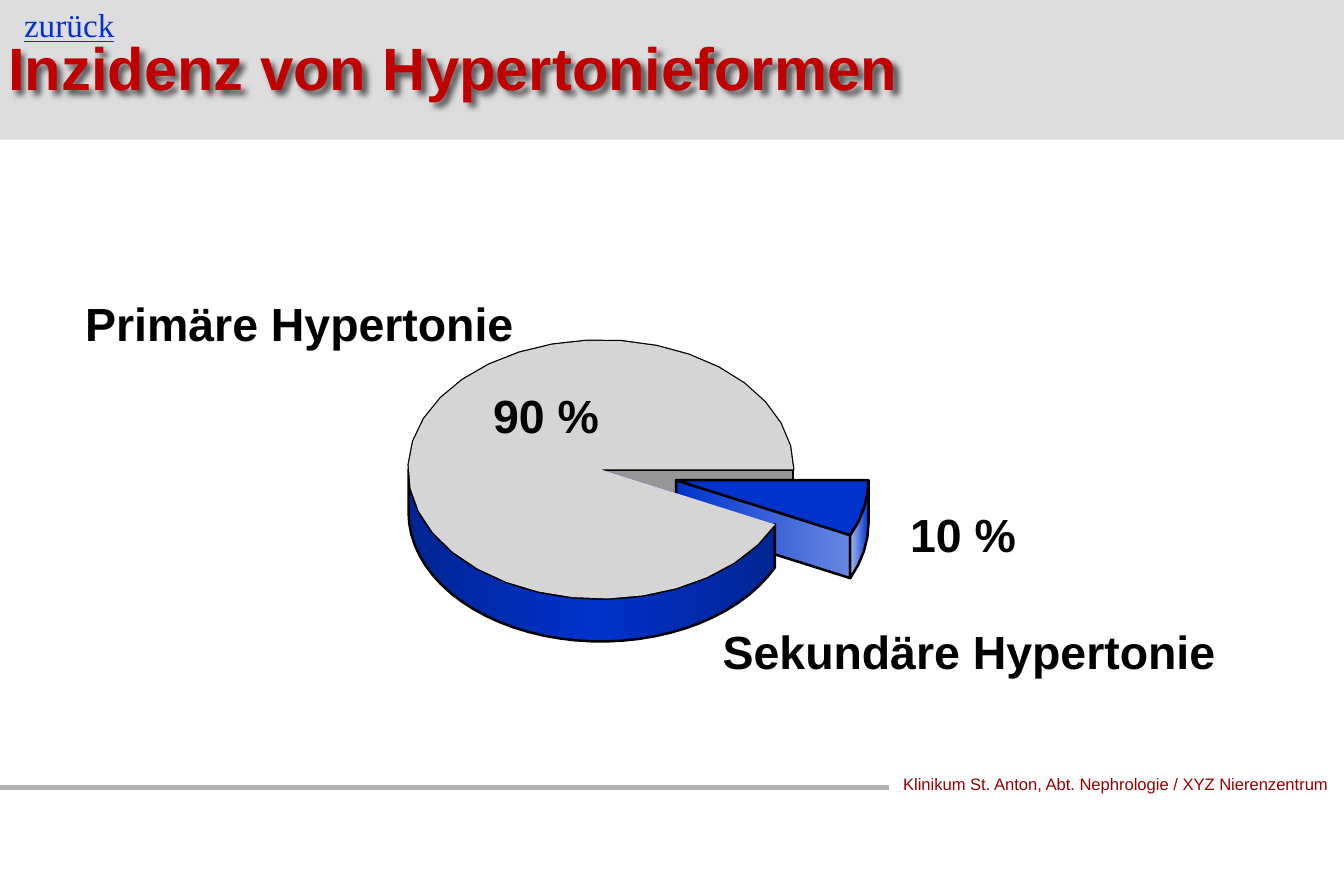
"""Build a slide with an exploded pie drawing of the incidence of hypertension forms."""
from dataclasses import dataclass
from math import cos, radians, sin

from lxml import etree
from pptx import Presentation, util as u
from pptx.dml.color import RGBColor
from pptx.enum import shapes, text
from pptx.oxml import ns

RX, RY, DEPTH = 1.61, 1.08, 0.36
CUT = 25.2
DISC = (5.03, 3.93)
WEDGE = (5.66, 4.02)
BLACK, BLUE, DARK, GREY = "000000", "0033CC", "002492", "D5D5D5"

Point = tuple[float, float]


@dataclass
class Face:
    pts: list[Point]
    fill: tuple[str, ...] = ()
    line: bool = True
    close: bool = True


@dataclass
class Label:
    words: str
    box: tuple[float, float, float, float]
    size: int = 28
    hue: str = BLACK
    font: str = "Arial"
    bold: bool = True
    under: bool = False
    wrap: bool = False
    align: text.PP_ALIGN = text.PP_ALIGN.CENTER


def paint(fmt, hue: str) -> None:
    """Set a solid colour on a fill."""
    fmt.solid()
    fmt.fore_color.rgb = RGBColor.from_string(hue)


def arc(mid: Point, start: float, end: float, steps: int = 32) -> list[Point]:
    """Return points on the ellipse around mid, clockwise from start to end."""
    turns = [radians(start + (end - start) * i / steps) for i in range(steps + 1)]
    return [(mid[0] + RX * cos(t), mid[1] + RY * sin(t)) for t in turns]


def wall(edge: list[Point]) -> list[Point]:
    """Return the upright band that hangs below an edge."""
    return edge + [(x, y + DEPTH) for x, y in reversed(edge)] + edge[:1]


def blend(shape, hues: tuple[str, ...]) -> None:
    """Fill a shape with a left to right gradient of evenly spaced colours."""
    shape.fill.gradient()
    shape.fill.gradient_angle = 0
    stops = shape._element.xpath(".//a:gsLst")[0]
    for stop in list(stops):
        stops.remove(stop)
    for i, hue in enumerate(hues):
        stop = etree.SubElement(stops, ns.qn("a:gs"), pos=str(100000 * i // (len(hues) - 1)))
        etree.SubElement(stop, ns.qn("a:srgbClr"), val=hue)


def style(shape, fill: tuple[str, ...], line: bool) -> None:
    """Give a shape its fill and outline, without a shadow."""
    shape.shadow.inherit = False
    if len(fill) > 1:
        blend(shape, fill)
    elif fill:
        paint(shape.fill, fill[0])
    else:
        shape.fill.background()
    if line:
        paint(shape.line.fill, BLACK)
        shape.line.width = u.Pt(1.5)
    else:
        shape.line.fill.background()


def block(slide, box: tuple, fill: str, line: bool = False) -> None:
    """Add a plain rectangle."""
    shape = slide.shapes.add_shape(shapes.MSO_SHAPE.RECTANGLE, *map(u.Inches, box))
    style(shape, (fill,), line)


def draw(slide, face: Face) -> None:
    """Add one face of the pie."""
    pts = [(u.Inches(x), u.Inches(y)) for x, y in face.pts]
    pen = slide.shapes.build_freeform(*pts[0])
    pen.add_line_segments(pts[1:], close=face.close)
    style(pen.convert_to_shape(), face.fill, face.line)


def write(shape, label: Label) -> None:
    """Place a text shape and format its words."""
    shape.left, shape.top, shape.width, shape.height = map(u.Inches, label.box)
    frame = shape.text_frame
    frame.text = label.words
    frame.word_wrap = label.wrap
    frame.auto_size = text.MSO_AUTO_SIZE.SHAPE_TO_FIT_TEXT
    frame.vertical_anchor = text.MSO_ANCHOR.TOP
    para = frame.paragraphs[0]
    para.alignment = label.align
    font = para.runs[0].font
    font.name, font.size = label.font, u.Pt(label.size)
    font.bold, font.underline = label.bold, label.under
    paint(font.fill, label.hue)


def shade(shape) -> None:
    """Give a text shape a soft shadow to the lower right."""
    shape.shadow.inherit = False
    glow = etree.SubElement(
        shape._element.xpath("./p:spPr/a:effectLst")[0], ns.qn("a:outerShdw"),
        blurRad="38100", dist="38100", dir="2700000", algn="tl")
    hue = etree.SubElement(glow, ns.qn("a:srgbClr"), val=BLACK)
    etree.SubElement(hue, ns.qn("a:alpha"), val="60000")


def rule(slide) -> None:
    """Add the footer line."""
    line = slide.shapes.add_connector(
        shapes.MSO_CONNECTOR.STRAIGHT, 0, u.Inches(6.59), u.Inches(7.44), u.Inches(6.59))
    paint(line.line.fill, "B2B2B2")
    line.line.width = u.Pt(3)
    etree.SubElement(line._element.spPr, ns.qn("a:effectLst"))


def faces() -> list[Face]:
    """Return the pie faces from back to front."""
    rim = arc(WEDGE, CUT, 0, 4)
    top = arc(DISC, CUT, 360) + [DISC]
    return [
        Face(wall([rim[0], WEDGE]), (BLUE, "6987E1")),
        Face(wall(rim), ("A9BAEE", BLUE)),
        Face(wall(arc(DISC, CUT, 180)), (DARK, BLUE, DARK)),
        Face(top, (BLUE,), close=False),
        Face(top, (GREY,), line=False),
        Face(rim + [WEDGE], (BLUE,)),
    ]


LABELS = [
    Label("Klinikum St. Anton, Abt. Nephrologie / XYZ Nierenzentrum",
          (7.32, 6.43, 3.89, 0.27), 10, "990000", bold=False, wrap=True,
          align=text.PP_ALIGN.RIGHT),
    Label("90 %", (3.96, 3.19, 1.22, 0.57)),
    Label("10 %", (7.45, 4.19, 1.22, 0.57)),
    Label("Primäre Hypertonie", (0.59, 2.42, 3.83, 0.57)),
    Label("Sekundäre Hypertonie", (5.92, 5.17, 4.38, 0.57)),
    Label("zurück", (0.1, -0.01, 0.96, 0.44), 20, BLUE, "Times New Roman",
          bold=False, under=True),
]
TITLE = Label("Inzidenz von Hypertonieformen", (-0.03, 0.21, 7.72, 0.71), 36, "C00000",
              align=text.PP_ALIGN.LEFT)


def main() -> None:
    """Build and save the slide."""
    deck = Presentation()
    deck.slide_width, deck.slide_height = u.Inches(11.25), u.Inches(7.5)
    slide = deck.slides.add_slide(deck.slide_layouts[5])
    block(slide, (0, 0, 11.25, 1.17), "DDDDDD")
    rule(slide)
    block(slide, (*DISC, RX, DEPTH), "969696", line=True)
    for face in faces():
        draw(slide, face)
    title = slide.shapes.title
    slide.shapes._spTree.append(title._element)
    write(title, TITLE)
    shade(title)
    for label in LABELS:
        write(slide.shapes.add_textbox(0, 0, 0, 0), label)
    deck.save("out.pptx")


if __name__ == "__main__":
    main()
